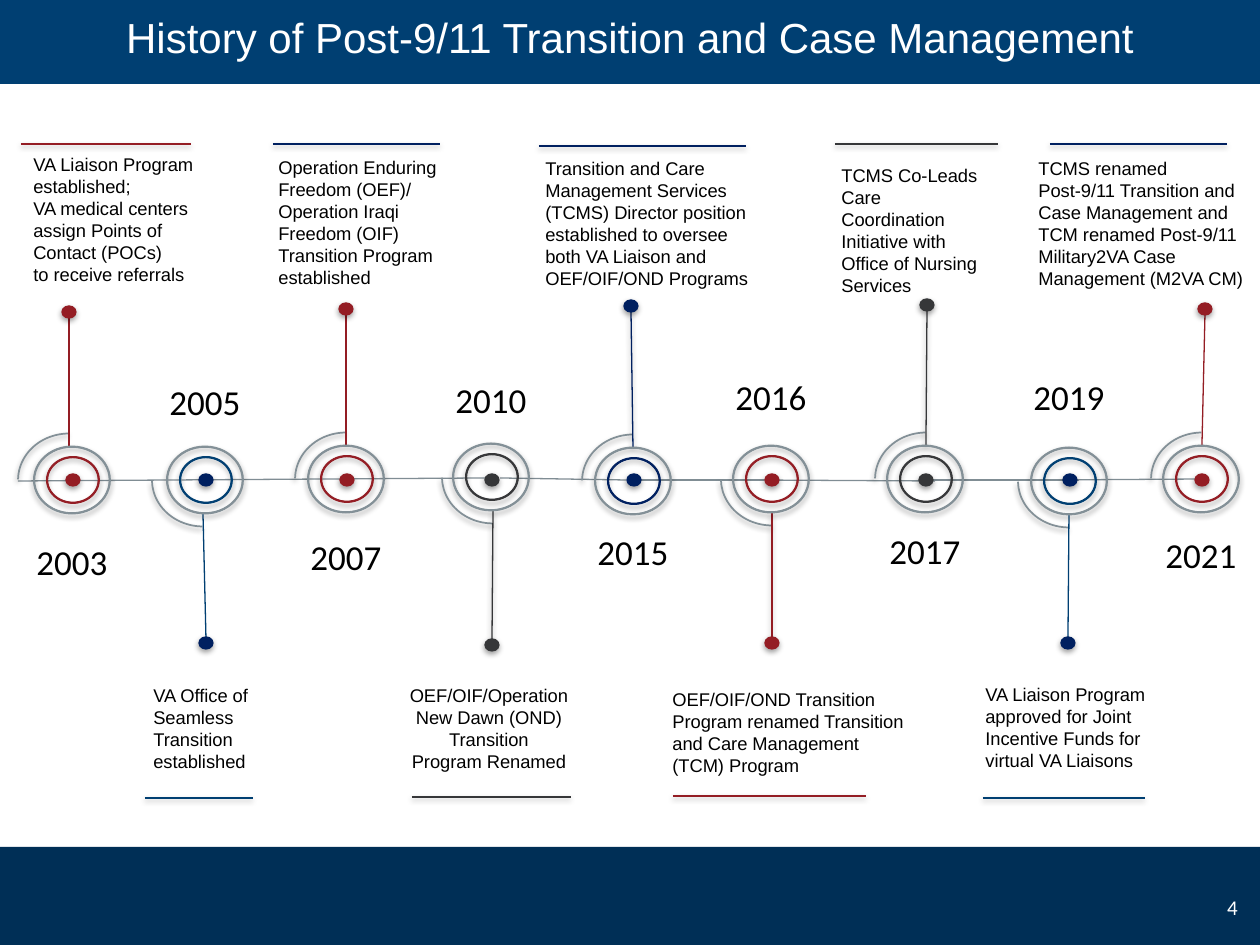
from dataclasses import dataclass

from lxml.etree import SubElement
from pptx import Presentation
from pptx.dml.color import RGBColor
from pptx.enum.shapes import MSO_CONNECTOR, MSO_SHAPE
from pptx.enum.text import MSO_ANCHOR, PP_ALIGN
from pptx.oxml.ns import qn
from pptx.util import Emu, Pt

COLORS = {
    "title": "003F72", "footer": "002F56", "white": "FFFFFF", "black": "000000",
    "axis": "808D94", "ring": "839097", "red": "941D24", "blue": "003F72",
    "navy": "002060", "gray": "363739",
}
SLIDE_W, SLIDE_H = 1260, 945
AXIS_Y = 480


def emu(px):
    return Emu(round(px * 914400 / 126))


def rgb(name):
    return RGBColor.from_string(COLORS[name])


@dataclass
class Event:
    year: int
    above: bool         # description sits above the axis
    color: str
    dot_color: str
    rule_color: str
    center: tuple       # middle of the rings
    foot_x: int         # where the stem meets the rings
    tip: tuple          # middle of the dot at the stem's end
    year_top: int
    rule: tuple         # left, right, y
    box: tuple          # left, top, width
    lines: tuple
    align: PP_ALIGN = PP_ALIGN.LEFT


EVENTS = [
    Event(2003, True, "red", "red", "red", (72, 480), 69, (69, 312), 534,
          (21, 191, 144), (21, 147, 200),
          ("VA Liaison Program established;",
           "VA medical centers assign Points of Contact (POCs)",
           "to receive referrals")),
    Event(2005, False, "blue", "navy", "blue", (205, 480), 203, (206, 643), 374,
          (145, 253, 798), (141, 678, 126),
          ("VA Office of Seamless Transition established",)),
    Event(2007, True, "red", "red", "navy", (346, 479), 346, (346, 309), 529,
          (273, 440, 144), (266, 150, 185),
          ("Operation Enduring Freedom (OEF)/ Operation Iraqi Freedom (OIF) "
           "Transition Program established",)),
    Event(2010, False, "gray", "gray", "gray", (491, 477), 493, (492, 645), 372,
          (412, 571, 797), (396, 678, 186),
          ("OEF/OIF/Operation New Dawn (OND) Transition", "Program Renamed"),
          PP_ALIGN.CENTER),
    Event(2015, True, "navy", "navy", "navy", (633, 481), 633, (631, 306), 524,
          (539, 746, 146), (533, 151, 239),
          ("Transition and Care Management Services (TCMS) Director position",
           "established to oversee both VA Liaison and OEF/OIF/OND Programs")),
    Event(2016, False, "red", "red", "red", (771, 479), 772, (772, 643), 369,
          (673, 866, 796), (660, 682, 261),
          ("OEF/OIF/OND Transition Program renamed Transition and Care "
           "Management (TCM) Program",)),
    Event(2017, True, "gray", "gray", "gray", (925, 479), 926, (927, 305), 523,
          (835, 998, 144), (829, 158, 171),
          ("TCMS Co-Leads Care Coordination Initiative with Office of Nursing "
           "Services",)),
    Event(2019, False, "blue", "navy", "blue", (1069, 481), 1069, (1068, 643), 369,
          (983, 1145, 798), (973, 677, 193),
          ("VA Liaison Program approved for Joint Incentive Funds for virtual "
           "VA Liaisons",)),
    Event(2021, True, "red", "red", "navy", (1201, 479), 1202, (1205, 309), 527,
          (1050, 1227, 144), (1026, 151, 234),
          ("TCMS renamed Post-9/11 Transition and Case Management and TCM "
           "renamed Post-9/11 Military2VA Case",
           "Management (M2VA CM)")),
]

AXIS_SEGMENTS = [
    (18, 481, 486, 478), (67, 480, 78, 484), (500, 478, 626, 480),
    (640, 480, 764, 480), (755, 480, 935, 481), (932, 480, 1079, 480),
    (1048, 480, 1200, 479),
]


class Deck:
    def __init__(self):
        self.presentation = Presentation()
        self.presentation.slide_width = emu(SLIDE_W)
        self.presentation.slide_height = emu(SLIDE_H)
        self.slide = self.presentation.slides.add_slide(
            self.presentation.slide_layouts[6])

    def soft_shadow(self, effects):
        shadow = SubElement(effects, qn("a:outerShdw"), blurRad="39000",
                            dist="22000", dir="5400000", rotWithShape="0")
        black = SubElement(shadow, qn("a:srgbClr"), val=COLORS["black"])
        SubElement(black, qn("a:alpha"), val="36000")

    def line(self, x1, y1, x2, y2, color, shadow=False):
        line = self.slide.shapes.add_connector(
            MSO_CONNECTOR.STRAIGHT, emu(x1), emu(y1), emu(x2), emu(y2))
        line.line.color.rgb = rgb(color)
        line.line.width = Pt(0.75)
        effects = SubElement(line._element.spPr, qn("a:effectLst"))
        if shadow:
            self.soft_shadow(effects)

    def shape(self, kind, center, size, color, width, filled=True, adjust=()):
        (x, y), (w, h) = center, size
        shape = self.slide.shapes.add_shape(
            kind, emu(x - w / 2), emu(y - h / 2), emu(w), emu(h))
        for index, value in enumerate(adjust):
            shape.adjustments[index] = value
        if filled:
            shape.fill.solid()
            shape.fill.fore_color.rgb = rgb(color)
        else:
            shape.fill.background()
        shape.line.color.rgb = rgb(color)
        shape.line.width = Pt(width)
        shape.shadow.inherit = False
        self.soft_shadow(shape._element.spPr.find(qn("a:effectLst")))
        return shape

    def dot(self, center, color):
        self.shape(MSO_SHAPE.OVAL, center, (14, 12), color, 0.75)

    def donut(self, center, size, color, thickness):
        self.shape(MSO_SHAPE.DONUT, center, size, color, 0.5, adjust=[thickness])

    def arc(self, center, above):
        size = (93, 102) if above else (102, 93)
        arc = self.shape(MSO_SHAPE.ARC, center, size, "ring", 1, False,
                         (54.4, 107.5))
        arc.rotation = 90 if above else 0

    def fill_text(self, frame, lines, size, font, color, align, anchor):
        frame.word_wrap = True
        frame.vertical_anchor = anchor
        frame.text = "\n".join(lines)
        for paragraph in frame.paragraphs:
            paragraph.alignment = align
            for run in paragraph.runs:
                run.font.size = Pt(size)
                run.font.name = font
                run.font.color.rgb = rgb(color)

    def text(self, left, top, width, height, lines, size, font="Arial",
             color="black", align=PP_ALIGN.LEFT, anchor=MSO_ANCHOR.TOP):
        box = self.slide.shapes.add_textbox(
            emu(left), emu(top), emu(width), emu(height))
        self.fill_text(box.text_frame, lines, size, font, color, align, anchor)

    def band(self, top, height, color, title=None):
        band = self.slide.shapes.add_shape(
            MSO_SHAPE.RECTANGLE, 0, emu(top), emu(SLIDE_W), emu(height))
        band.fill.solid()
        band.fill.fore_color.rgb = rgb(color)
        band.line.fill.background()
        band.shadow.inherit = False
        if title:
            self.fill_text(band.text_frame, [title], 24, "Arial", "white",
                           PP_ALIGN.CENTER, MSO_ANCHOR.MIDDLE)

    def event(self, event):
        x, y = event.center
        tip_x, tip_y = event.tip
        side = 1 if event.above else -1
        # Stem and quarter arc
        self.arc((event.foot_x, y), event.above)
        self.line(tip_x, tip_y + side * 5, event.foot_x, y - side * 34,
                  event.color, shadow=2010 <= event.year <= 2017)
        # Rings and dots
        self.donut((x + 1, y), (53, 47), event.color, 0.028)
        self.donut((x, y), (77, 68), "ring", 0.019)
        for center in ((x + 1, AXIS_Y), event.tip):
            self.dot(center, event.dot_color)
        # Year, description and rule
        self.text(x - 65, event.year_top, 130, 55, [str(event.year)], 20,
                  "Calibri", align=PP_ALIGN.CENTER)
        self.text(*event.box, 146 if event.above else 102, event.lines, 10.5,
                  align=event.align)
        left, right, rule_y = event.rule
        self.line(left, rule_y, right, rule_y, event.rule_color, shadow=True)


def main():
    deck = Deck()
    # Header, footer and page number
    deck.band(847, 101, "footer")
    deck.band(-10, 94, "title", "History of Post-9/11 Transition and Case Management")
    deck.text(956, 882, 294, 50, ["4"], 12, "Calibri", "white",
              PP_ALIGN.RIGHT, MSO_ANCHOR.MIDDLE)
    # Timeline
    for segment in AXIS_SEGMENTS:
        deck.line(*segment, "axis")
    for event in EVENTS:
        deck.event(event)
    deck.presentation.save("out.pptx")


if __name__ == "__main__":
    main()
